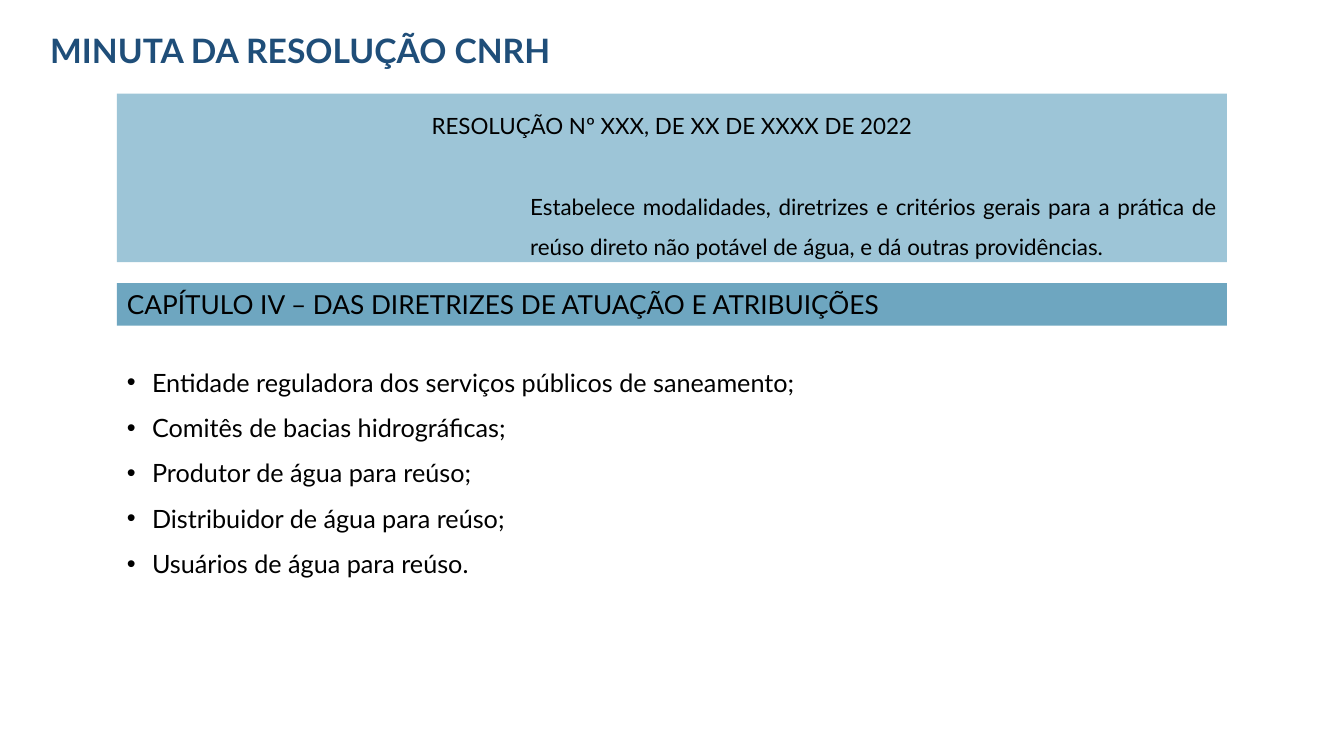
from lxml import etree
from pptx import Presentation
from pptx.dml.color import RGBColor
from pptx.enum.shapes import MSO_SHAPE
from pptx.enum.text import MSO_ANCHOR, PP_ALIGN
from pptx.oxml.ns import qn
from pptx.util import Inches, Pt

NAVY = RGBColor(0x1F, 0x4E, 0x79)
BLACK = RGBColor(0x00, 0x00, 0x00)
LIGHT_BLUE = RGBColor(0x9D, 0xC5, 0xD7)
MID_BLUE = RGBColor(0x6E, 0xA6, 0xC0)
FONT = "Lato"
BODY_LEFT = 1.16
BAND_WIDTH = 11.01

ACTORS = [
    "Entidade reguladora dos serviços públicos de saneamento;",
    "Comitês de bacias hidrográficas;",
    "Produtor de água para reúso;",
    "Distribuidor de água para reúso;",
    "Usuários de água para reúso.",
]


def add_text(para, text, size, color=BLACK, bold=False):
    span = para.add_run()
    span.text = text
    span.font.name = FONT
    span.font.size = Pt(size)
    span.font.bold = bold
    span.font.color.rgb = color


def set_indent(para, margin, first_line=0):
    properties = para._p.get_or_add_pPr()
    properties.set("marL", str(Inches(margin)))
    properties.set("indent", str(Inches(first_line)))
    return properties


def add_text_box(page, box):
    frame = page.shapes.add_textbox(*map(Inches, box)).text_frame
    frame.word_wrap = True
    return frame


def add_band(page, box, color):
    band = page.shapes.add_shape(MSO_SHAPE.RECTANGLE, *map(Inches, box))
    band.shadow.inherit = False
    band.fill.solid()
    band.fill.fore_color.rgb = color
    band.line.fill.background()
    frame = band.text_frame
    frame.word_wrap = True
    frame.vertical_anchor = MSO_ANCHOR.TOP
    frame.paragraphs[0].alignment = PP_ALIGN.LEFT
    return frame


def add_title(page, box):
    para = add_text_box(page, box).paragraphs[0]
    add_text(para, "MINUTA DA RESOLUÇÃO CNRH", 24, NAVY, True)


def add_resolution(page, box):
    frame = add_band(page, box, LIGHT_BLUE)
    heading = frame.paragraphs[0]
    heading.alignment = PP_ALIGN.CENTER
    heading.line_spacing = 1.5
    add_text(heading, "RESOLUÇÃO Nº XXX, DE XX DE XXXX DE 2022", 16)

    summary = frame.add_paragraph()
    set_indent(summary, 4)
    summary.alignment = PP_ALIGN.JUSTIFY
    summary.line_spacing = 1.5
    summary.space_before = Pt(28.8)
    add_text(summary, "Estabelece modalidades, diretrizes e critérios gerais para a prática de "
             "reúso direto não potável de água, e dá outras providências.", 16)


def add_chapter(page, box):
    para = add_band(page, box, MID_BLUE).paragraphs[0]
    add_text(para, "CAPÍTULO IV – DAS DIRETRIZES DE ATUAÇÃO E ATRIBUIÇÕES", 18.7)


def add_actors(page, box):
    frame = add_text_box(page, box)
    for index, actor in enumerate(ACTORS):
        para = frame.add_paragraph() if index else frame.paragraphs[0]
        properties = set_indent(para, 0.25, -0.25)
        etree.SubElement(properties, qn("a:buFont")).set("typeface", "Arial")
        etree.SubElement(properties, qn("a:buChar")).set("char", "•")
        para.alignment = PP_ALIGN.JUSTIFY
        para.line_spacing = 1.5
        add_text(para, actor, 18)


def main():
    deck = Presentation()
    deck.slide_width = Inches(13.33)
    deck.slide_height = Inches(7.5)
    page = deck.slides.add_slide(deck.slide_layouts[6])
    add_actors(page, (BODY_LEFT, 3.44, 7.66, 2.32))
    add_chapter(page, (BODY_LEFT, 2.81, BAND_WIDTH, 0.42))
    add_title(page, (0.4, 0.25, 8.67, 0.5))
    add_resolution(page, (BODY_LEFT, 0.93, BAND_WIDTH, 1.67))
    deck.save("out.pptx")


if __name__ == "__main__":
    main()
